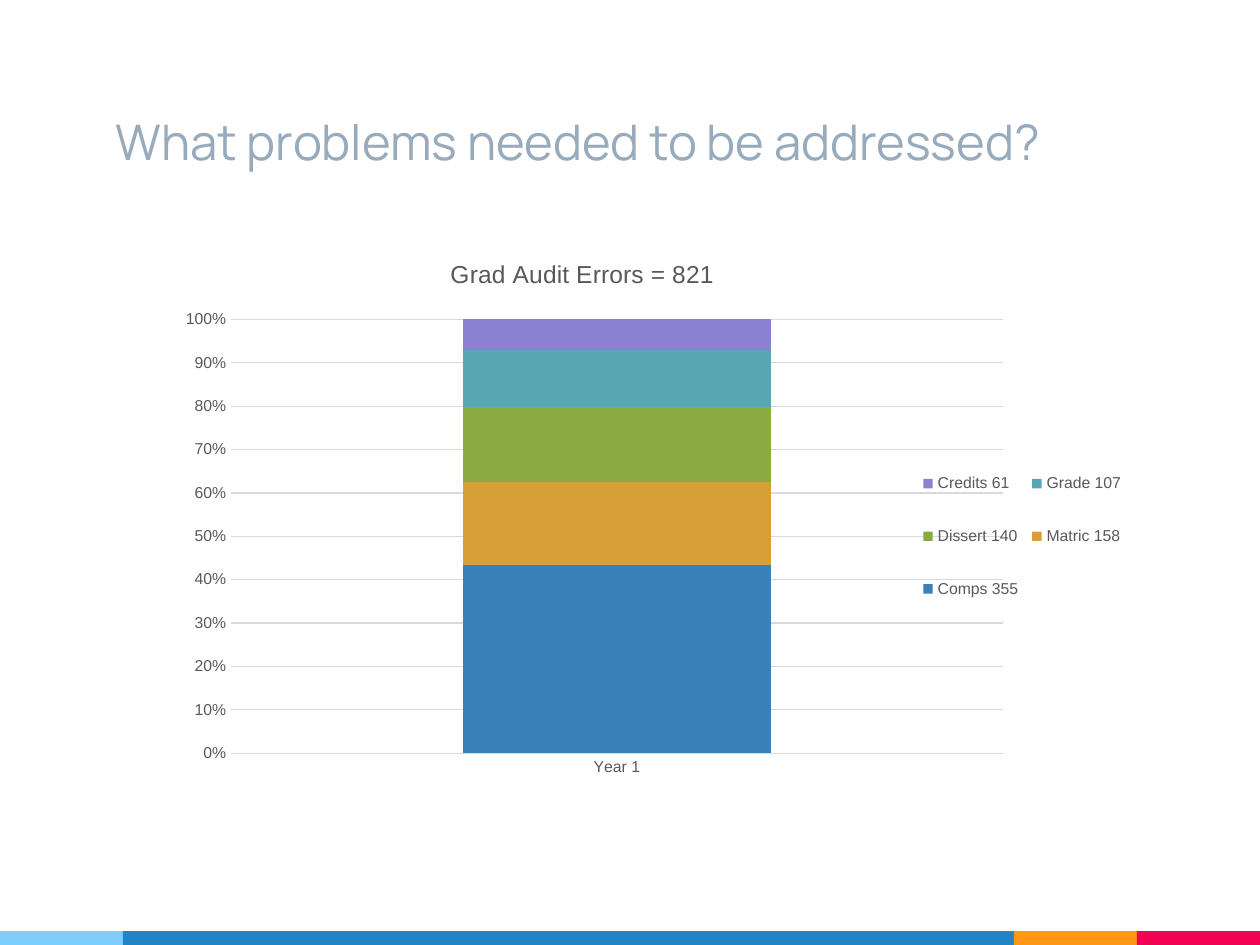
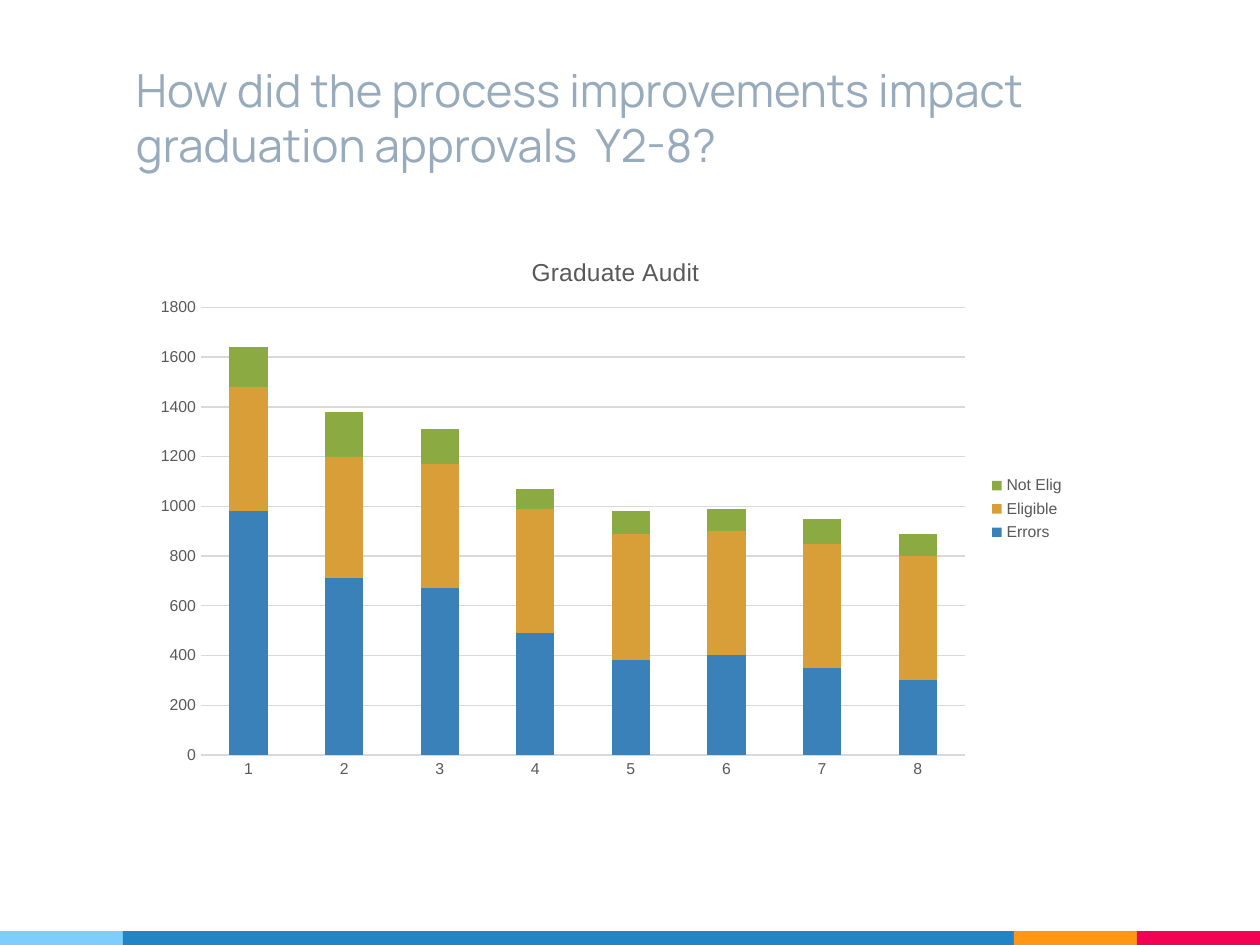
from dataclasses import dataclass
from pptx import Presentation
from pptx.chart.data import CategoryChartData as Data
from pptx.dml.color import RGBColor as RGB
from pptx.enum.chart import XL_CHART_TYPE as Kind, XL_LEGEND_POSITION as Side
from pptx.enum.chart import XL_TICK_MARK as Tick
from pptx.enum.shapes import MSO_SHAPE as Form
from pptx.enum.text import MSO_ANCHOR as Anchor, MSO_AUTO_SIZE as Fit, PP_ALIGN as Align
from pptx.oxml import parse_xml
from pptx.oxml.ns import nsdecls
from pptx.util import Cm, Pt


@dataclass(frozen=True)
class Theme:
    head_font: str = "Manrope"
    font: str = "Arial"
    head: str = "97ABBC"
    text: str = "595959"
    grid: str = "D9D9D9"
    bands: tuple = ("7ECEFD", "2185C5", "FF9715", "F20253")
    series: tuple = ("3A81BA", "D89F39", "8BAB42", "57A7B5", "8B81D2")
    label: float = 9
    caption: float = 14
    rule: float = 0.75


THEME = Theme()
WIDTH, HEIGHT = 25.4, 19.05


def style(font, name, size, color):
    font.name, font.size, font.bold = name, Pt(size), False
    font.color.rgb = RGB.from_string(color)


def pin(part, x, y, w=None, h=None, inner=False):
    """Fix a chart part at fractions of the chart's box."""
    for old in part.findall("{*}layout"):
        part.remove(old)
    tags = '<c:layoutTarget val="inner"/>' if inner else ""
    tags += '<c:xMode val="edge"/><c:yMode val="edge"/>'
    for key, value in zip("xywh", (x, y, w, h)):
        if value is not None:
            tags += f'<c:{key} val="{value}"/>'
    layout = parse_xml(f'<c:layout {nsdecls("c")}><c:manualLayout>{tags}'
                       '</c:manualLayout></c:layout>')
    # the schema puts a layout first in the plot, second in title and legend
    part.insert(0 if inner else 1, layout)


def add_bands(master, slide, box):
    """Draw the footer colours and move them behind the master's parts."""
    left, top, width, height = box
    end = 2.48
    spans = (end, width - 3 * end, end, end)
    for i, (span, color) in enumerate(zip(spans, THEME.bands)):
        band = slide.shapes.add_shape(Form.RECTANGLE, Cm(left), Cm(top), Cm(span), Cm(height))
        band.shadow.inherit = False
        band.fill.solid()
        band.fill.fore_color.rgb = RGB.from_string(color)
        band.line.fill.background()
        band.element.nvSpPr.cNvPr.id = 20 + i
        master.shapes.element.insert(2 + i, band.element)
        left += span


def set_title(slide, box, text, size):
    title = slide.shapes.title
    title.left, title.top, title.width, title.height = map(Cm, box)
    frame = title.text_frame
    frame.text = text
    frame.auto_size, frame.word_wrap = Fit.NONE, True
    frame.vertical_anchor = Anchor.BOTTOM
    frame.margin_left = frame.margin_right = Cm(0.25)
    frame.margin_top = frame.margin_bottom = Cm(0.25)
    para = frame.paragraphs[0]
    para.alignment = Align.LEFT
    style(para.runs[0].font, THEME.head_font, size, THEME.head)


def style_axes(chart):
    line = RGB.from_string(THEME.grid)
    for axis in (chart.category_axis, chart.value_axis):
        axis.major_tick_mark = axis.minor_tick_mark = Tick.NONE
        style(axis.tick_labels.font, THEME.font, THEME.label, THEME.text)
    chart.value_axis.format.line.fill.background()
    for rule in (chart.category_axis.format.line,
                 chart.value_axis.major_gridlines.format.line):
        rule.color.rgb, rule.width = line, Pt(THEME.rule)


def add_stack(slide, box, kind, caption, cats, rows, places):
    """Add a stacked column chart; places holds the plot, caption and legend spots."""
    data = Data()
    data.categories = cats
    for name, values in rows.items():
        data.add_series(name, values)
    chart = slide.shapes.add_chart(kind, *map(Cm, box), data).chart
    style(chart.font, THEME.font, THEME.label, THEME.text)
    style_axes(chart)

    plot = chart.plots[0]
    plot.gap_width, plot.overlap, plot.vary_by_categories = 150, 100, False
    for series, color in zip(plot.series, THEME.series):
        series.format.fill.solid()
        series.format.fill.fore_color.rgb = RGB.from_string(color)

    frame = chart.chart_title.text_frame
    frame.text = caption
    style(frame.paragraphs[0].runs[0].font, THEME.font, THEME.caption, THEME.text)
    chart.chart_title.include_in_layout = False

    chart.has_legend = True
    legend = chart.legend
    legend.position, legend.include_in_layout = Side.RIGHT, False
    style(legend.font, THEME.font, THEME.label, THEME.text)

    pin(chart.element.chart.plotArea, *places["plot"], inner=True)
    pin(chart.element.chart.title, *places["caption"])
    if "legend" in places:
        pin(legend.element if hasattr(legend, "element") else chart.element.chart.legend,
            *places["legend"])
    return chart


def show_problems(slide):
    set_title(slide, (2.08, 0.81, 20.88, 2.87), "What problems needed to be addressed?", 28)
    rows = {"Comps 355": [43], "Matric 158": [19], "Dissert 140": [17],
            "Grade 107": [13], "Credits 61": [7]}
    places = {"plot": (0.07, 0.15, 0.79, 0.79), "caption": (0.29, 0.03),
              "legend": (0.77, 0.37, 0.22, 0.35)}
    chart = add_stack(slide, (3.28, 4.78, 19.69, 11.07), Kind.COLUMN_STACKED_100,
                      "Grad Audit Errors = 821", ["Year 1"], rows, places)
    labels = chart.value_axis.tick_labels
    labels.number_format, labels.number_format_is_linked = "0%", False


def show_impact(slide):
    set_title(slide, (2.49, 1.47, 20.02, 2.24),
              "How did the process improvements impact graduation approvals  Y2-8?", 26)
    rows = {"Errors": [980, 710, 670, 490, 380, 400, 350, 300],
            "Eligible": [500, 490, 500, 500, 510, 500, 500, 500],
            "Not Elig": [160, 180, 140, 80, 90, 90, 100, 90]}
    places = {"plot": (0.06, 0.14, 0.82, 0.8), "caption": (0.41, 0.04)}
    add_stack(slide, (2.92, 4.62, 18.8, 11.28), Kind.COLUMN_STACKED, "Graduate Audit",
              [str(year) for year in range(1, 9)], rows, places)


def main():
    deck = Presentation()
    deck.slide_width, deck.slide_height = Cm(WIDTH), Cm(HEIGHT)
    slides = [deck.slides.add_slide(deck.slide_layouts[5]) for _ in range(2)]
    add_bands(deck.slide_master, slides[0], (0, HEIGHT - 0.28, WIDTH, 0.28))
    for show, slide in zip((show_problems, show_impact), slides):
        show(slide)
    deck.save("out.pptx")


if __name__ == "__main__":
    main()
